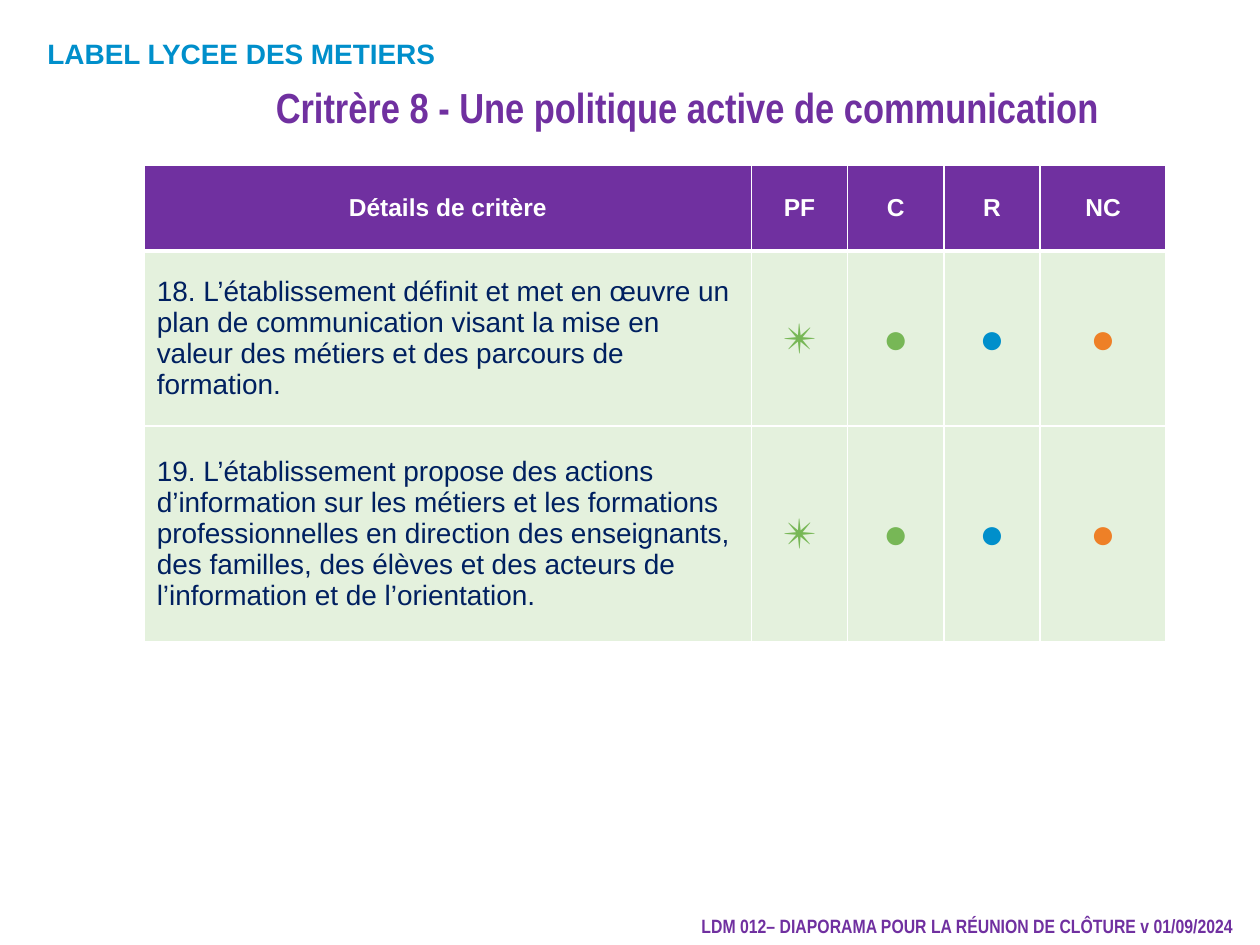
import pptx
import pptx.util
import pptx.dml.color
import pptx.enum.text
import pptx.oxml
import pptx.oxml.ns
from lxml import etree

Pt = pptx.util.Pt
ALIGN = pptx.enum.text.PP_ALIGN
ANCHOR = pptx.enum.text.MSO_ANCHOR


def rgb(value):
    return pptx.dml.color.RGBColor.from_string(value)


class Deck:
    PURPLE, BLUE, GREEN, ORANGE = "7030A0", "008FCB", "77B756", "EE8027"
    NAVY, PALE, WHITE = "002060", "E4F1DD", "FFFFFF"
    BODY, NARROW = "Arial", "Arial Narrow"

    def __init__(self):
        self.prs = pptx.Presentation()
        self.prs.slide_width, self.prs.slide_height = Pt(720), Pt(540)
        self.s = self.prs.slides.add_slide(self.prs.slide_layouts[6])

    def add_run(self, tf, text, size, color, font=BODY, bold=False, align=ALIGN.LEFT):
        p = tf.paragraphs[0]
        p.alignment = align
        r = p.add_run()
        r.text = text
        r.font.name, r.font.size, r.font.bold = font, Pt(size), bold
        r.font.color.rgb = rgb(color)

    def text(self, x, y, w, h, text, size, color, grow=False, **style):
        tf = self.s.shapes.add_textbox(Pt(x), Pt(y), Pt(w), Pt(h)).text_frame
        tf.word_wrap = True
        if grow:
            tf.auto_size = pptx.enum.text.MSO_AUTO_SIZE.SHAPE_TO_FIT_TEXT
        self.add_run(tf, text, size, color, bold=True, **style)

    def table(self, x, y, widths, heights):
        tb = self.s.shapes.add_table(len(heights), len(widths), Pt(x), Pt(y),
                                     Pt(sum(widths)), Pt(sum(heights))).table
        for col, w in zip(tb.columns, widths):
            col.width = Pt(w)
        for row, h in zip(tb.rows, heights):
            row.height = Pt(h)
        return tb

    def cell(self, cell, text, size, color, fill, top=1, bottom=1, **style):
        cell.vertical_anchor = ANCHOR.MIDDLE
        self.add_run(cell.text_frame, text, size, color, **style)
        # Borders come before the fill in the cell properties
        tc_pr = cell._tc.get_or_add_tcPr()
        qn = pptx.oxml.ns.qn
        for side, width in (("L", 1), ("R", 1), ("T", top), ("B", bottom)):
            ln = etree.SubElement(tc_pr, qn(f"a:ln{side}"), w=str(Pt(width)))
            solid = etree.SubElement(ln, qn("a:solidFill"))
            etree.SubElement(solid, qn("a:srgbClr"), val=self.WHITE)
        cell.fill.solid()
        cell.fill.fore_color.rgb = rgb(fill)


def main():
    d = Deck()

    # Footer and headings
    d.text(229.7, 519, 482.4, 21, "LDM 012– DIAPORAMA POUR LA RÉUNION DE CLÔTURE v 01/09/2024",
           11, d.PURPLE, grow=True, font=d.NARROW, align=ALIGN.RIGHT)
    d.text(20, 17.3, 284, 26.6, "LABEL LYCEE DES METIERS", 16, d.BLUE, grow=True)
    d.text(150.5, 43.2, 594, 59, "Critrère 8 - Une politique active de communication",
           24, d.PURPLE, font=d.NARROW)

    # Criteria table
    tb = d.table(82.4, 94.5, [347, 55, 55, 55, 72], [49, 100, 123])
    for i, label in enumerate(["Détails de critère", "PF", "C", "R", "NC"]):
        d.cell(tb.cell(0, i), label, 14, d.WHITE, d.PURPLE, bottom=3,
               bold=True, align=ALIGN.CENTER)

    criteria = [
        "18. L’établissement déﬁnit et met en œuvre un plan de communication visant "
        "la mise en valeur des métiers et des parcours de formation.",
        "19. L’établissement propose des actions d’information sur les métiers et les "
        "formations professionnelles en direction des enseignants, des familles, des "
        "élèves et des acteurs de l’information et de l’orientation.",
    ]
    marks = [("✴", d.GREEN), ("●", d.GREEN), ("●", d.BLUE), ("●", d.ORANGE)]
    for row, criterion in enumerate(criteria, 1):
        top = 3 if row == 1 else 1
        d.cell(tb.cell(row, 0), criterion, 16, d.NAVY, d.PALE, top=top)
        for col, (mark, color) in enumerate(marks, 1):
            d.cell(tb.cell(row, col), mark, 24, color, d.PALE, top=top, align=ALIGN.CENTER)

    d.prs.save("out.pptx")


if __name__ == "__main__":
    main()
